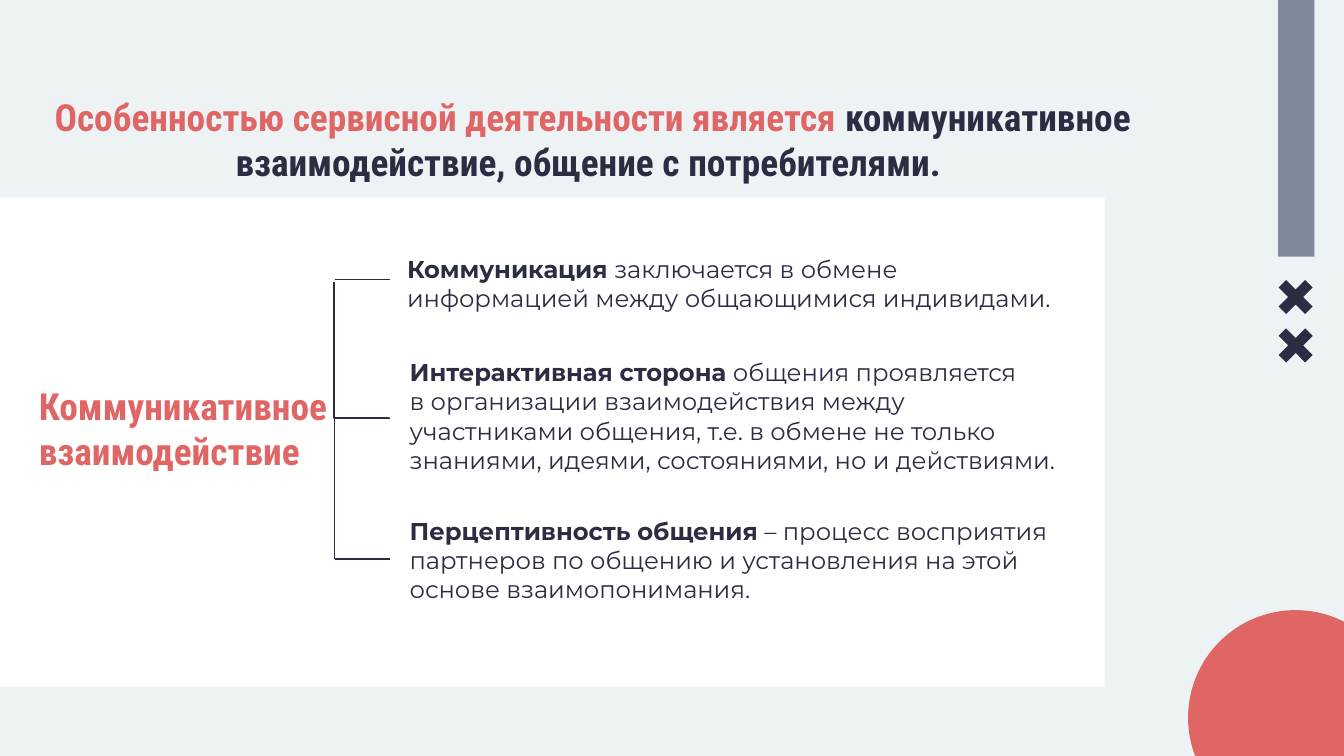
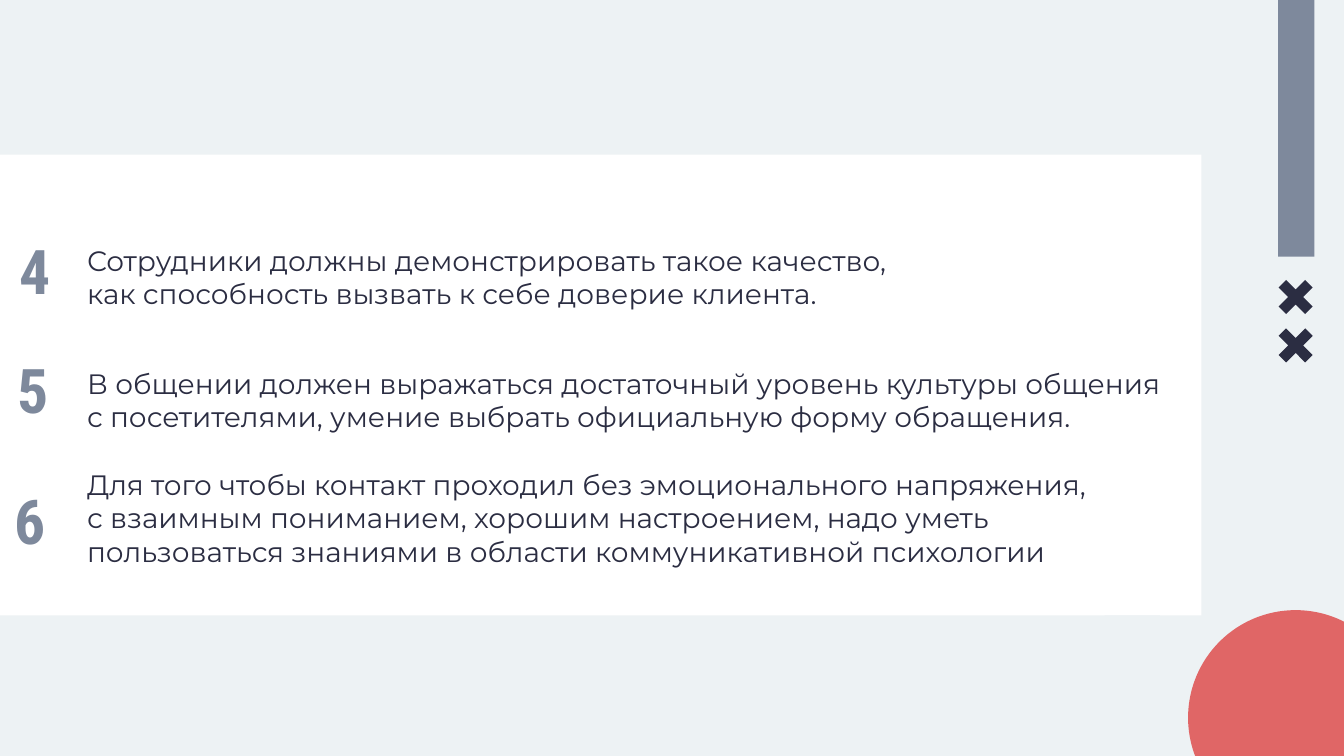
"""Builds two slides on communication with customers in service work."""
import lxml.etree
import pptx
import pptx.dml.color
import pptx.enum.shapes
import pptx.enum.text
import pptx.oxml.ns
import pptx.util

Inches = pptx.util.Inches
Shape = pptx.enum.shapes.MSO_SHAPE
Connector = pptx.enum.shapes.MSO_CONNECTOR
Anchor = pptx.enum.text.MSO_ANCHOR
Align = pptx.enum.text.PP_ALIGN
qn = pptx.oxml.ns.qn


class Theme:
    paper = pptx.dml.color.RGBColor.from_string("EDF2F4")
    white = pptx.dml.color.RGBColor.from_string("FFFFFF")
    slate = pptx.dml.color.RGBColor.from_string("7E899C")
    navy = pptx.dml.color.RGBColor.from_string("2B2D42")
    coral = pptx.dml.color.RGBColor.from_string("E06666")
    line = pptx.dml.color.RGBColor.from_string("292C41")
    heading_font = "Roboto Condensed"
    body_font = "Montserrat"
    heading_size = 20
    body_size = 13
    list_size = 15
    number_size = 33


def add_block(page, kind, place, color, rotation=0):
    block = page.shapes.add_shape(kind, *map(Inches, place))
    block.shadow.inherit = False
    block.fill.solid()
    block.fill.fore_color.rgb = color
    block.line.fill.background()
    block.rotation = rotation
    return block


def add_text(page, place, paragraphs, font, size, anchor=Anchor.TOP, align=Align.LEFT):
    box = page.shapes.add_textbox(*map(Inches, place))
    frame = box.text_frame
    frame.word_wrap = True
    frame.vertical_anchor = anchor
    frame.margin_left = frame.margin_right = Inches(0.1)
    frame.margin_top = frame.margin_bottom = Inches(0.1)
    for index, (space, spans) in enumerate(paragraphs):
        para = frame.add_paragraph() if index else frame.paragraphs[0]
        para.alignment = align
        para.space_before = pptx.util.Pt(space)
        para.font.name = font
        para.font.size = pptx.util.Pt(size)
        for text, color, bold in spans:
            for number, row in enumerate(text.split("\n")):
                if number:
                    para.add_line_break()
                span = para.add_run()
                span.text = row
                span.font.color.rgb = color
                span.font.bold = bold


deck = pptx.Presentation()
deck.slide_width = Inches(10)
deck.slide_height = deck.slide_width * 9 // 16

pages = [deck.slides.add_slide(deck.slide_layouts[6]) for _ in range(2)]
for page in pages:
    page.background.fill.solid()
    page.background.fill.fore_color.rgb = Theme.paper
    add_block(page, Shape.RECTANGLE, (-0.05, 1.47, 8.27, 3.64), Theme.white)
    add_block(page, Shape.RECTANGLE, (8.41, 0.54, 2.47, 0.27), Theme.slate, 90)
    add_block(page, Shape.OVAL, (8.84, 4.54, 1.6, 1.6), Theme.coral)
    for top in (2.07, 2.43):
        cross = add_block(page, Shape.CROSS, (9.5, top, 0.28, 0.28), Theme.navy, 135)
        cross.adjustments[0] = 0.36

scheme, rules = pages

add_text(scheme, (0.3, 0.6, 8.22, 0.95), [(0, [
    ("Особенностью сервисной деятельности является ", Theme.coral, True),
    ("коммуникативное взаимодействие, общение с потребителями. ", Theme.navy, True),
])], Theme.heading_font, Theme.heading_size, align=Align.CENTER)
add_text(scheme, (0.19, 2.75, 2.71, 0.88),
         [(0, [("Коммуникативное взаимодействие", Theme.coral, True)])],
         Theme.heading_font, Theme.heading_size)

sides = [
    ((2.93, 1.79, 5.08, 0.49), "Коммуникация ",
     "заключается в обмене информацией между общающимися индивидами."),
    ((2.95, 2.56, 5.25, 0.94), "Интерактивная сторона ",
     "общения проявляется \nв организации взаимодействия между \n"
     "участниками общения, т.е. в обмене не только знаниями, идеями, "
     "состояниями, но и действиями."),
    ((2.95, 3.74, 5.06, 0.86), "Перцептивность общения ",
     "– процесс восприятия партнеров по общению и установления на этой "
     "основе взаимопонимания."),
]
for place, term, meaning in sides:
    add_text(scheme, place,
             [(0, [(term, Theme.navy, True), (meaning, Theme.navy, False)])],
             Theme.body_font, Theme.body_size)

bracket = [
    (Connector.ELBOW, (3.2, 2.4, 2.18, 2.81)),
    (Connector.STRAIGHT, (2.49, 3.11, 2.49, 4.16)),
    (Connector.STRAIGHT, (2.49, 4.16, 2.9, 4.16)),
    (Connector.STRAIGHT, (2.49, 2.08, 2.9, 2.08)),
]
for kind, ends in bracket:
    branch = scheme.shapes.add_connector(kind, *map(Inches, ends))
    branch.line.color.rgb = Theme.line
    branch.line.width = pptx.util.Pt(0.75)
    properties = branch._element.spPr
    lxml.etree.SubElement(properties, qn("a:effectLst"))
    if kind == Connector.ELBOW:
        properties.find(qn("a:xfrm")).set("rot", "16200000")
        guides = properties.find(qn("a:prstGeom")).find(qn("a:avLst"))
        lxml.etree.SubElement(guides, qn("a:gd"), name="adj1", fmla="val 99500")

add_block(rules, Shape.RECTANGLE, (-0.13, 1.15, 9.07, 3.43), Theme.white)
requirements = [
    (0, "Сотрудники должны демонстрировать такое качество, \n"
        "как способность вызвать к себе доверие клиента."),
    (30, "В общении должен выражаться достаточный уровень культуры общения \n"
         "с посетителями, умение выбрать официальную форму обращения."),
    (18, "Для того чтобы контакт проходил без эмоционального напряжения, \n"
         "с взаимным пониманием, хорошим настроением, надо уметь \n"
         "пользоваться знаниями в области коммуникативной психологии"),
]
add_text(rules, (0.55, 1.71, 8.93, 3.13),
         [(space, [(text, Theme.navy, False)]) for space, text in requirements],
         Theme.body_font, Theme.list_size)

numbers = [
    ("4", (0.05, 1.76, 0.52, 0.49)),
    ("5", (0.03, 2.64, 0.54, 0.51)),
    ("6", (0.01, 3.62, 0.54, 0.49)),
]
for number, place in numbers:
    add_text(rules, place, [(0, [(number, Theme.slate, True)])],
             Theme.heading_font, Theme.number_size, Anchor.MIDDLE)
add_block(rules, Shape.RECTANGLE, (-0.13, 4.58, 8.76, 1.24), Theme.paper)

deck.save("out.pptx")
